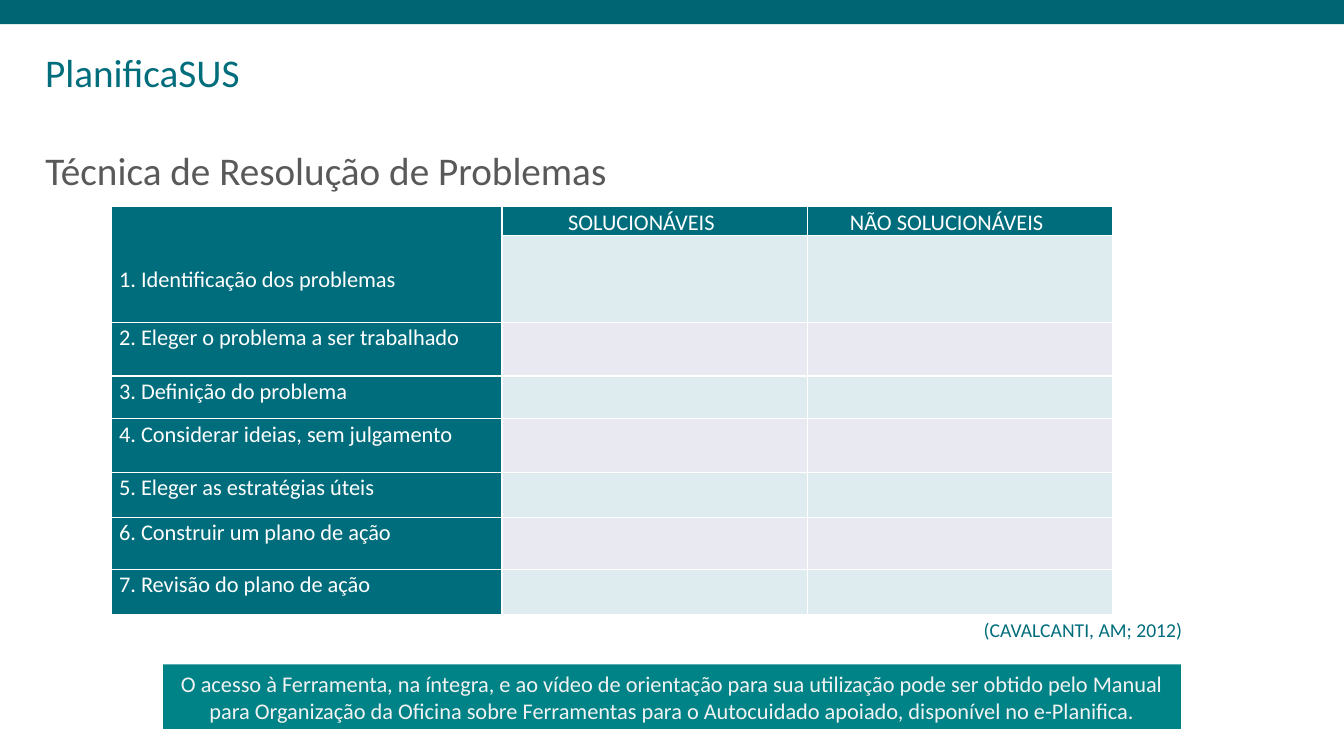
from dataclasses import dataclass

from lxml import etree
from pptx import Presentation
from pptx.dml.color import RGBColor
from pptx.enum.shapes import MSO_SHAPE
from pptx.enum.text import MSO_ANCHOR, MSO_AUTO_SIZE, PP_ALIGN
from pptx.oxml.ns import qn
from pptx.util import Cm, Pt

LEFT, CENTER, JUSTIFY = PP_ALIGN.LEFT, PP_ALIGN.CENTER, PP_ALIGN.JUSTIFY
TOP, MIDDLE = MSO_ANCHOR.TOP, MSO_ANCHOR.MIDDLE
RECTANGLE = MSO_SHAPE.RECTANGLE
NO_AUTOFIT = MSO_AUTO_SIZE.NONE

PROGRAM = "PlanificaSUS"
TITLE = "Técnica de Resolução de Problemas"
HEADERS = ["SOLUCIONÁVEIS", "NÃO SOLUCIONÁVEIS"]
STEPS = [  # step, row height in cm
    ("Identificação dos problemas", 2.14),
    ("Eleger o problema a ser trabalhado", 1.35),
    ("Definição do problema", 1.08),
    ("Considerar ideias, sem julgamento", 1.35),
    ("Eleger as estratégias úteis", 1.14),
    ("Construir um plano de ação", 1.3),
    ("Revisão do plano de ação", 1.14),
]
CITATION = "(CAVALCANTI, AM; 2012)"
ACCESS_NOTE = (
    "O acesso à Ferramenta, na íntegra, e ao vídeo de orientação para sua "
    "utilização pode ser obtido pelo Manual para Organização da Oficina sobre "
    "Ferramentas para o Autocuidado apoiado, disponível no e-Planifica."
)

SLIDE_SIZE = (33.87, 19.05)
TABLE_LEFT, TABLE_TOP = 2.82, 5.21
HEADER_HEIGHT = 0.73
COLUMN_WIDTHS = [9.83, 7.69, 7.69]
FIRST_STEP_DROP = 1.46
HEADER_INDENT = 0.84
CELL_INSET = 0.18
ROW_HEIGHTS = [HEADER_HEIGHT] + [height for _, height in STEPS]
CITATION_TOP = TABLE_TOP + sum(ROW_HEIGHTS)


@dataclass(frozen=True)
class Theme:
    font: str = "Calibri"
    teal: str = "006D7C"
    band: str = "006573"
    note_fill: str = "008387"
    note_text: str = "F2F2F2"
    title: str = "595959"
    white: str = "FFFFFF"
    rows: tuple = ("DEECEF", "E9EAF1")
    heading_size: int = 28
    body_size: int = 16
    citation_size: int = 14


THEME = Theme()


def box(left, top, width, height):
    return [Cm(value) for value in (left, top, width, height)]


def write(frame, text, size, color, align=LEFT, spacing=None):
    frame.text = text
    paragraph = frame.paragraphs[0]
    paragraph.alignment = align
    paragraph.line_spacing = spacing
    font = paragraph.runs[0].font
    for name, value in {"name": THEME.font, "size": Pt(size), "bold": False}.items():
        setattr(font, name, value)
    font.color.rgb = RGBColor.from_string(color)


def add_label(slide, text, place, size):
    frame = slide.shapes.add_textbox(*box(*place)).text_frame
    frame.word_wrap = False
    write(frame, text, size, THEME.teal)


def add_block(slide, place, color):
    block = slide.shapes.add_shape(RECTANGLE, *box(*place))
    block.shadow.inherit = False
    block.fill.solid()
    block.fill.fore_color.rgb = RGBColor.from_string(color)
    block.line.fill.background()
    return block


def format_cell(cell, color, **margins):
    """Set insets, white borders and fill; borders must come before the fill."""
    insets = {"left": CELL_INSET, "right": CELL_INSET, "top": 0, "bottom": 0}
    for side, value in {**insets, **margins}.items():
        setattr(cell, f"margin_{side}", Cm(value))
    cell.vertical_anchor = TOP
    properties = cell._tc.get_or_add_tcPr()
    for edge in ("lnL", "lnR", "lnT", "lnB"):
        line = etree.SubElement(properties, qn(f"a:{edge}"), w=str(Pt(1)))
        fill = etree.SubElement(line, qn("a:solidFill"))
        etree.SubElement(fill, qn("a:srgbClr"), val=THEME.white)
    cell.fill.solid()
    cell.fill.fore_color.rgb = RGBColor.from_string(color)


def write_cell(cell, text, align):
    write(cell.text_frame, text, THEME.body_size, THEME.white, align, 1.07)


def add_steps_table(slide):
    place = box(TABLE_LEFT, TABLE_TOP, sum(COLUMN_WIDTHS), sum(ROW_HEIGHTS))
    table = slide.shapes.add_table(
        len(ROW_HEIGHTS), len(COLUMN_WIDTHS), *place
    ).table
    table.first_row = table.horz_banding = False
    for column, width in zip(table.columns, COLUMN_WIDTHS):
        column.width = Cm(width)
    for row, height in zip(table.rows, ROW_HEIGHTS):
        row.height = Cm(height)

    table.cell(0, 0).merge(table.cell(1, 0))
    for column, header in enumerate(HEADERS, 1):
        cell = table.cell(0, column)
        format_cell(cell, THEME.teal, right=HEADER_INDENT)
        write_cell(cell, header, CENTER)
    format_cell(table.cell(1, 0), THEME.teal)
    for number, (step, _) in enumerate(STEPS, 1):
        first = number == 1
        cell = table.cell(0 if first else number, 0)
        format_cell(cell, THEME.teal, top=FIRST_STEP_DROP if first else 0)
        write_cell(cell, f"{number}. {step}", JUSTIFY)
        for column in range(1, len(COLUMN_WIDTHS)):
            format_cell(table.cell(number, column), THEME.rows[(number - 1) % 2])


def main():
    presentation = Presentation()
    presentation.slide_width, presentation.slide_height = map(Cm, SLIDE_SIZE)
    slide = presentation.slides.add_slide(presentation.slide_layouts[5])

    title = slide.shapes.title
    title.left, title.top, title.width, title.height = box(0.89, 2.51, 27.91, 3.68)
    title.text_frame.vertical_anchor = MIDDLE
    title.text_frame.auto_size = NO_AUTOFIT
    write(title.text_frame, TITLE, THEME.heading_size, THEME.title, spacing=0.9)

    add_block(slide, (0, 0, SLIDE_SIZE[0], 0.61), THEME.band)
    add_label(slide, PROGRAM, (0.89, 1.09, 5.46, 1.45), THEME.heading_size)
    add_steps_table(slide)
    add_label(slide, CITATION, (24.54, CITATION_TOP, 5.66, 0.86), THEME.citation_size)

    note = add_block(slide, (4.11, 16.74, 25.65, 1.63), THEME.note_fill).text_frame
    note.word_wrap = True
    note.vertical_anchor = MIDDLE
    write(note, ACCESS_NOTE, THEME.body_size, THEME.note_text, CENTER)

    presentation.save("out.pptx")


if __name__ == "__main__":
    main()
